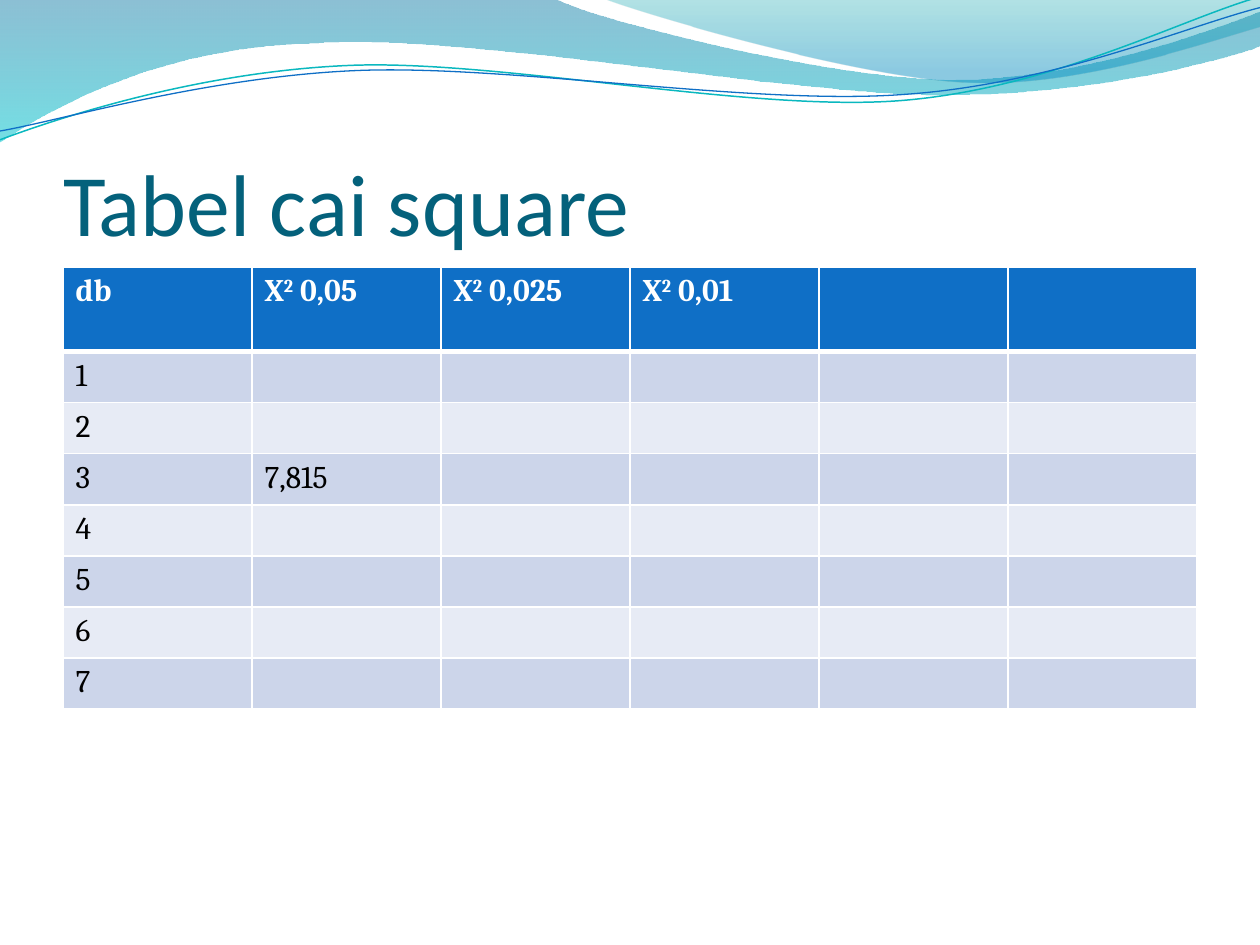
from math import cos, radians, sin

from lxml import etree
from pptx import Presentation
from pptx.dml.color import RGBColor
from pptx.enum.text import MSO_ANCHOR, MSO_AUTO_SIZE, PP_ALIGN
from pptx.oxml.ns import qn
from pptx.util import Inches, Pt

ANCHOR_BOTTOM = MSO_ANCHOR.BOTTOM
ALIGN_LEFT = PP_ALIGN.LEFT
NO_AUTOFIT = MSO_AUTO_SIZE.NONE
TITLE_ONLY = 5
WAVE_ROTATION = 357.3

COLORS = {
    "title": "04617B", "header": "0F6FC6", "odd": "CCD5EA", "even": "E7EBF5",
    "white": "FFFFFF", "black": "000000", "teal_line": "0AB8BF", "blue_line": "0F6FC6",
    "deep_blue": "0074A1", "cyan": "00C6CF", "teal": "00A1A9", "blue": "008BBF",
}


def color(name):
    return RGBColor.from_string(COLORS[name])


def turn_back(x, y, box, rotation):
    """Undo a shape's rotation and measure the point from its box corner."""
    left, top, width, height = box
    dx, dy = x - left - width / 2, y - top - height / 2
    angle = radians(-rotation)
    return (width / 2 + dx * cos(angle) - dy * sin(angle),
            height / 2 + dx * sin(angle) + dy * cos(angle))


class SlideBuilder:
    title_font = "Calibri"
    body_font = "Cambria"
    body_size = Pt(18)

    def __init__(self, presentation):
        self.slide = presentation.slides.add_slide(presentation.slide_layouts[TITLE_ONLY])

    def add_outline(self, box, start, segments, close, rotation=0):
        """Draw line segments (2 numbers) and cubic curves (6 numbers)."""
        builder = self.slide.shapes.build_freeform(Inches(start[0]), Inches(start[1]))
        builder.add_line_segments(
            [(Inches(segment[-2]), Inches(segment[-1])) for segment in segments], close=close)
        shape = builder.convert_to_shape()
        shape.shadow.inherit = False
        shape.left, shape.top, shape.width, shape.height = map(Inches, box)
        shape.rotation = rotation

        # Exchange the straight segments for cubic curves
        outline = next(shape._element.iter(qn("a:path")))
        outline.set("w", str(shape.width))
        outline.set("h", str(shape.height))
        for element, numbers in zip(list(outline), [start, *segments]):
            tag = element.tag if len(numbers) == 2 else qn("a:cubicBezTo")
            command = etree.Element(tag)
            for x, y in zip(numbers[::2], numbers[1::2]):
                local_x, local_y = turn_back(x, y, box, rotation)
                etree.SubElement(command, qn("a:pt"),
                                 x=str(Inches(local_x)), y=str(Inches(local_y)))
            outline.replace(element, command)
        return shape

    def add_band(self, box, start, segments, stops):
        """Filled wave; stops are (position, colour name, opacity percent)."""
        shape = self.add_outline(box, start, segments, close=True)
        shape.line.fill.background()
        shape.fill.gradient()
        shape.fill.gradient_angle = 270
        for stop, (position, name, _) in zip(shape.fill.gradient_stops, stops):
            stop.position = position
            stop.color.rgb = color(name)
        stop_colors = shape._element.spPr.iter(qn("a:srgbClr"))
        for element, (_, _, opacity) in zip(list(stop_colors), stops):
            etree.SubElement(element, qn("a:alpha"), val=str(opacity * 1000))

    def add_wave_line(self, box, start, segments, name, width):
        shape = self.add_outline(box, start, segments, close=False, rotation=WAVE_ROTATION)
        shape.fill.background()
        shape.line.color.rgb = color(name)
        shape.line.width = Pt(width)

    def add_title(self, text, left, top, width, height):
        title = self.slide.shapes.title
        title._element.getparent().append(title._element)  # in front of the waves
        title.left, title.top = Inches(left), Inches(top)
        title.width, title.height = Inches(width), Inches(height)
        frame = title.text_frame
        frame.text = text
        frame.auto_size = NO_AUTOFIT
        frame.word_wrap = True
        frame.vertical_anchor = ANCHOR_BOTTOM
        frame.margin_left = frame.margin_right = frame.margin_bottom = 0
        frame.margin_top = Inches(0.05)
        paragraph = frame.paragraphs[0]
        paragraph.alignment = ALIGN_LEFT
        font = paragraph.runs[0].font
        font.name, font.size = self.title_font, Pt(50)
        font.color.rgb = color("title")

    def add_table(self, rows, left, top, width, heights):
        shape = self.slide.shapes.add_table(
            len(rows), len(rows[0]), Inches(left), Inches(top),
            Inches(width), sum(heights))
        table = shape.table
        for row_index, (row, height) in enumerate(zip(rows, heights)):
            table.rows[row_index].height = height
            for column_index, parts in enumerate(row):
                self.format_cell(table.cell(row_index, column_index), parts, row_index)

    def format_cell(self, cell, parts, row_index):
        """Parts alternate between normal and superscript text."""
        header = row_index == 0
        paragraph = cell.text_frame.paragraphs[0]
        paragraph.font.size = self.body_size
        for index, text in enumerate(parts):
            run = paragraph.add_run()
            run.text = text
            run.font.name, run.font.size = self.body_font, self.body_size
            run.font.bold = header
            run.font.color.rgb = color("white" if header else "black")
            if index % 2:
                run.font._element.set("baseline", "30000")
        # Borders come before the fill in the cell properties
        properties = cell._tc.get_or_add_tcPr()
        for side in ("lnL", "lnR", "lnT", "lnB"):
            thick = (header and side == "lnB") or (row_index == 1 and side == "lnT")
            line = etree.SubElement(properties, qn(f"a:{side}"), w=str(Pt(3 if thick else 1)))
            fill = etree.SubElement(line, qn("a:solidFill"))
            etree.SubElement(fill, qn("a:srgbClr"), val=COLORS["white"])
        cell.fill.solid()
        cell.fill.fore_color.rgb = color(
            "header" if header else "odd" if row_index % 2 else "even")


def main():
    presentation = Presentation()
    presentation.slide_width, presentation.slide_height = Inches(10), Inches(7.5)
    builder = SlideBuilder(presentation)

    # Wave bands
    builder.add_band(
        (-0.01, -0.01, 10.02, 1.14), (0, 0),
        [(4.4, -0.01), (4.76, 0.17, 6.64, 0.63, 7.58, 0.63),
         (8.53, 0.63, 9.58, 0.26, 10, 0.09), (10.01, 0.36),
         (9.83, 0.44, 8.7, 0.76, 7.46, 0.75), (6.22, 0.75, 3.82, 0.28, 2.57, 0.34),
         (1.29, 0.36, 0.46, 0.83, -0.01, 1.13)],
        [(0, "deep_blue", 45), (1, "cyan", 55)])
    builder.add_band(
        (4.79, -0.01, 5.21, 0.7), (4.79, -0.01),
        [(5.09, 0.11, 6.82, 0.62, 7.69, 0.65), (8.56, 0.69, 9.61, 0.32, 10, 0.21), (10, 0)],
        [(0, "teal", 30), (0.8, "blue", 45)])

    # Wave lines
    builder.add_wave_line(
        (-0.02, 0.22, 10.02, 0.71), (0, 1.11),
        [(0.48, 0.93, 1.58, 0.57, 2.77, 0.52), (3.95, 0.47, 5.93, 0.89, 7.13, 0.8),
         (8.33, 0.71, 9.38, 0.15, 9.98, -0.02)], "teal_line", 0.85)
    builder.add_wave_line(
        (-0.02, 0.3, 10.03, 0.58), (0, 1.04),
        [(0.47, 0.96, 1.64, 0.61, 2.83, 0.56), (4.03, 0.51, 5.97, 0.84, 7.17, 0.75),
         (8.36, 0.67, 9.41, 0.21, 10, 0.06)], "blue_line", 0.75)

    # Title
    builder.add_title("Tabel cai square", 0.5, 0.77, 9, 1.25)

    # Chi-square table
    levels = ("0,05", "0,025", "0,01")
    header = [["db"], *(["X", "2", f" {level}"] for level in levels), [], []]
    rows = [header] + [[[str(number)], [], [], [], [], []] for number in range(1, 8)]
    rows[3][1] = ["7,815"]
    builder.add_table(rows, 0.5, 2.12, 9, [Inches(0.67)] + [Pt(29.2)] * 7)

    presentation.save("out.pptx")


if __name__ == "__main__":
    main()
